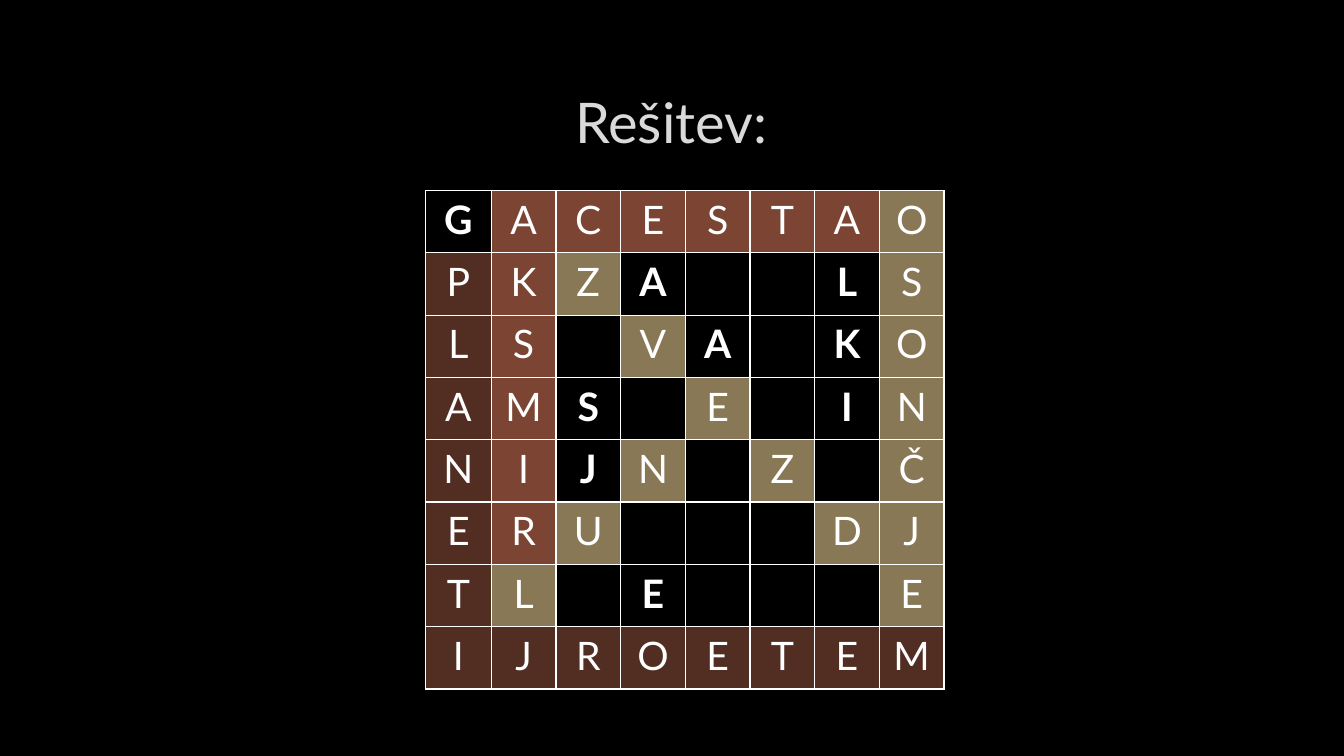
from lxml.etree import SubElement
from pptx import Presentation
from pptx.dml.color import RGBColor
from pptx.enum.text import MSO_ANCHOR, PP_ALIGN
from pptx.oxml import parse_xml
from pptx.oxml.ns import nsdecls, qn
from pptx.util import Cm, Pt

BLACK = RGBColor(0x00, 0x00, 0x00)
WHITE = RGBColor(0xFF, 0xFF, 0xFF)
TITLE_GREY = RGBColor(0xDA, 0xDA, 0xDA)
RUST = RGBColor(0x7C, 0x44, 0x32)
SAND = RGBColor(0x89, 0x78, 0x55)
BROWN = RGBColor(0x52, 0x2D, 0x22)

FONT = "Lato"
LETTERS = [
    "GACESTAO",
    "PKZA  LS",
    "LS VA KO",
    "AMS E IN",
    "NIJN Z Č",
    "ERU   DJ",
    "TL E   E",
    "IJROETEM",
]
FILLS = [
    ".RRRRRRS",
    "BRS....S",
    "BR.S...S",
    "BR..S..S",
    "BR.S.S.S",
    "BRS...SS",
    "BS.....S",
    "BBBBBBBB",
]
WORD_COLOURS = {"R": RUST, "S": SAND, "B": BROWN}


def style(paragraph, size, colour, bold=False):
    paragraph.alignment = PP_ALIGN.CENTER
    paragraph.font.name = FONT
    paragraph.font.size = Pt(size)
    paragraph.font.bold = bold
    paragraph.font.color.rgb = colour


def add_borders(cell):
    properties = cell._tc.get_or_add_tcPr()
    for index, side in enumerate(("lnL", "lnR", "lnT", "lnB")):
        border = parse_xml(f'<a:{side} {nsdecls("a")} w="12700"/>')
        fill = SubElement(border, qn("a:solidFill"))
        SubElement(fill, qn("a:srgbClr"), val=str(WHITE))
        properties.insert(index, border)


deck = Presentation()
deck.slide_width = Cm(33.87)
deck.slide_height = Cm(19.05)
page = deck.slides.add_slide(deck.slide_layouts[6])
page.background.fill.solid()
page.background.fill.fore_color.rgb = BLACK

title = page.shapes.add_textbox(Cm(2.54), Cm(1.7), Cm(28.75), Cm(2.69))
title.text_frame.word_wrap = True
title.text_frame.vertical_anchor = MSO_ANCHOR.MIDDLE
heading = title.text_frame.paragraphs[0]
span = heading.add_run()
span.text = "Rešitev:"
style(heading, 40, TITLE_GREY)
span.font._element.insert(0, parse_xml(
    f'<a:ln {nsdecls("a")} w="9525"><a:solidFill><a:srgbClr val="404040">'
    '<a:alpha val="10000"/></a:srgbClr></a:solidFill></a:ln>'))

size = len(LETTERS)
frame = page.shapes.add_table(size, size, Cm(10.72), Cm(4.8), Cm(13.07), Cm(12.56))
grid = frame.table
grid.first_row = False
grid.horz_banding = False
for row in grid.rows:
    row.height = Cm(1.57)
for column in grid.columns:
    column.width = Cm(1.63)
grid.columns[0].width = Cm(1.66)

for row, (letters, fills) in enumerate(zip(LETTERS, FILLS)):
    for column, (letter, code) in enumerate(zip(letters, fills)):
        cell = grid.cell(row, column)
        cell.text = letter.strip()
        style(cell.text_frame.paragraphs[0], 28, WHITE, code == ".")
        cell.fill.solid()
        cell.fill.fore_color.rgb = WORD_COLOURS.get(code, BLACK)
        add_borders(cell)

deck.save("out.pptx")
